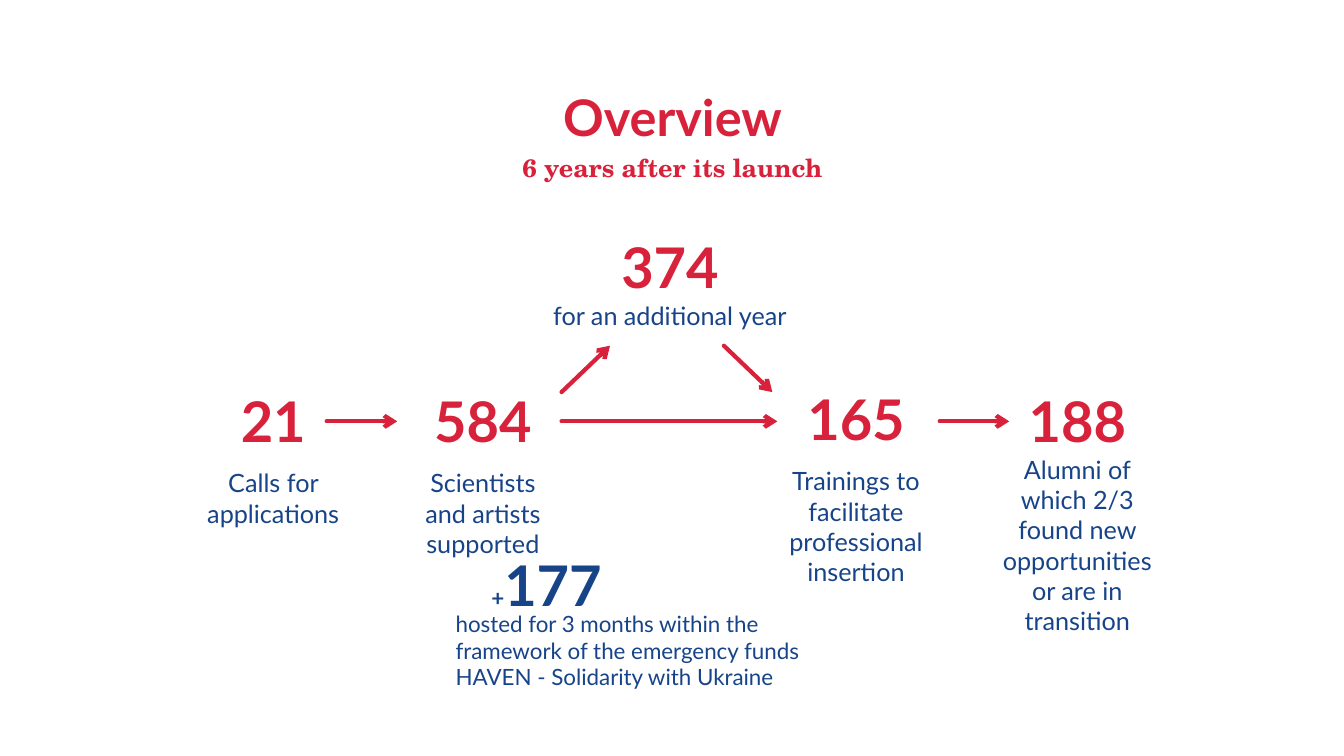
from itertools import chain
from pptx import Presentation
from pptx import util as u
from pptx.dml.color import RGBColor
from pptx.enum import shapes, text
from pptx.oxml.ns import qn
from lxml import etree

RED, BLUE = "D8213B", "174489"
SANS, SERIF = "Lato", "TeX Gyre Schola"
# Run styles: size, colour, bold
NUMBER = (40, RED, True)
LABEL = (18, BLUE, False)
NOTE = (16, BLUE, False)


def rgb(value):
    return RGBColor.from_string(value)


class OverviewSlide:
    def __init__(self, prs):
        self.s = prs.slides.add_slide(prs.slide_layouts[0])

    def format(self, sp, box, styles, font=SANS, align=text.PP_ALIGN.CENTER,
               anchor=text.MSO_ANCHOR.TOP):
        """Place a text shape and style its runs in order."""
        sp.left, sp.top, sp.width, sp.height = (u.Inches(v) for v in box)
        tf = sp.text_frame
        tf.word_wrap = True
        tf.auto_size = text.MSO_AUTO_SIZE.NONE
        tf.vertical_anchor = anchor
        for p in tf.paragraphs:
            p.alignment = align
            p.space_before = u.Pt(0)
        runs = chain.from_iterable(p.runs for p in tf.paragraphs)
        for r, (size, color, bold) in zip(runs, styles):
            r.font.name, r.font.size, r.font.bold = font, u.Pt(size), bold
            r.font.color.rgb = rgb(color)

    def heading(self, sp, words, box, size, font, anchor):
        sp.text_frame.text = words
        self.format(sp, box, [(size, RED, True)], font, anchor=anchor)

    def textbox(self, words, box, styles, **options):
        sp = self.s.shapes.add_textbox(0, 0, 0, 0)
        sp.text_frame.text = words
        self.format(sp, box, styles, **options)
        return sp

    def stat(self, words, box):
        sp = self.textbox(words, box, [NUMBER, LABEL])
        for p in sp.text_frame.paragraphs:
            p.space_after = u.Pt(6)
        for p in sp.text_frame.paragraphs[1:]:
            p.space_before = u.Pt(3.6)

    def arrow(self, *ends):
        line = self.s.shapes.add_connector(
            shapes.MSO_CONNECTOR.STRAIGHT, *(u.Inches(v) for v in ends))
        line.line.color.rgb = rgb(RED)
        line.line.width = u.Pt(3)
        ln = line.line._get_or_add_ln()
        ln.set("cap", "rnd")
        etree.SubElement(ln, qn("a:tailEnd"), type="arrow")
        etree.SubElement(line._element.spPr, qn("a:effectLst"))


def main():
    prs = Presentation()
    prs.slide_width, prs.slide_height = u.Inches(13.33), u.Inches(7.5)
    slide = OverviewSlide(prs)

    # Title and subtitle
    title, subtitle = slide.s.placeholders
    slide.heading(title, "Overview", (0.64, 0.39, 12.06, 1.11), 36, SANS,
                  text.MSO_ANCHOR.BOTTOM)
    slide.heading(subtitle, "6 years after its launch",
                  (0.64, 1.46, 12.06, 0.39), 18, SERIF, text.MSO_ANCHOR.TOP)

    # Figures: \n starts a spaced paragraph, \v only breaks the line
    for words, box in (
        ("21\nCalls for applications", (1.84, 3.79, 1.74, 1.47)),
        ("584\nScientists and artists supported", (4.06, 3.79, 1.46, 1.47)),
        ("374\vfor an additional year", (4.98, 2.26, 3.33, 0.96)),
        ("165\nTrainings to facilitate professional insertion",
         (7.49, 3.77, 2, 1.49)),
        ("188\vAlumni of which 2/3 found new opportunities or are in transition",
         (9.75, 3.79, 1.87, 1.47)),
    ):
        slide.stat(words, box)

    # Flow arrows: along the row, then up and down through the extra year
    row, low, high = 4.18, 3.89, 3.43
    for x1, x2 in ((3.24, 3.94), (5.57, 7.71), (9.32, 10.01)):
        slide.arrow(x1, row, x2, row)
    slide.arrow(5.57, low, 6.05, high)
    slide.arrow(7.18, high, 7.66, low)

    # Emergency funds
    slide.textbox("hosted for 3 months within the framework of the emergency funds\n"
                  "HAVEN - Solidarity with Ukraine",
                  (4.42, 6, 3.65, 1.18), [NOTE, NOTE], align=text.PP_ALIGN.LEFT)
    box = (4.06, 5.41, 2.72, 0.64)
    extra = slide.textbox("+", box, [])
    extra.text_frame.paragraphs[0].add_run().text = "177"
    slide.format(extra, box, [(16, BLUE, True), (40, BLUE, True)])

    prs.save("out.pptx")


if __name__ == "__main__":
    main()
